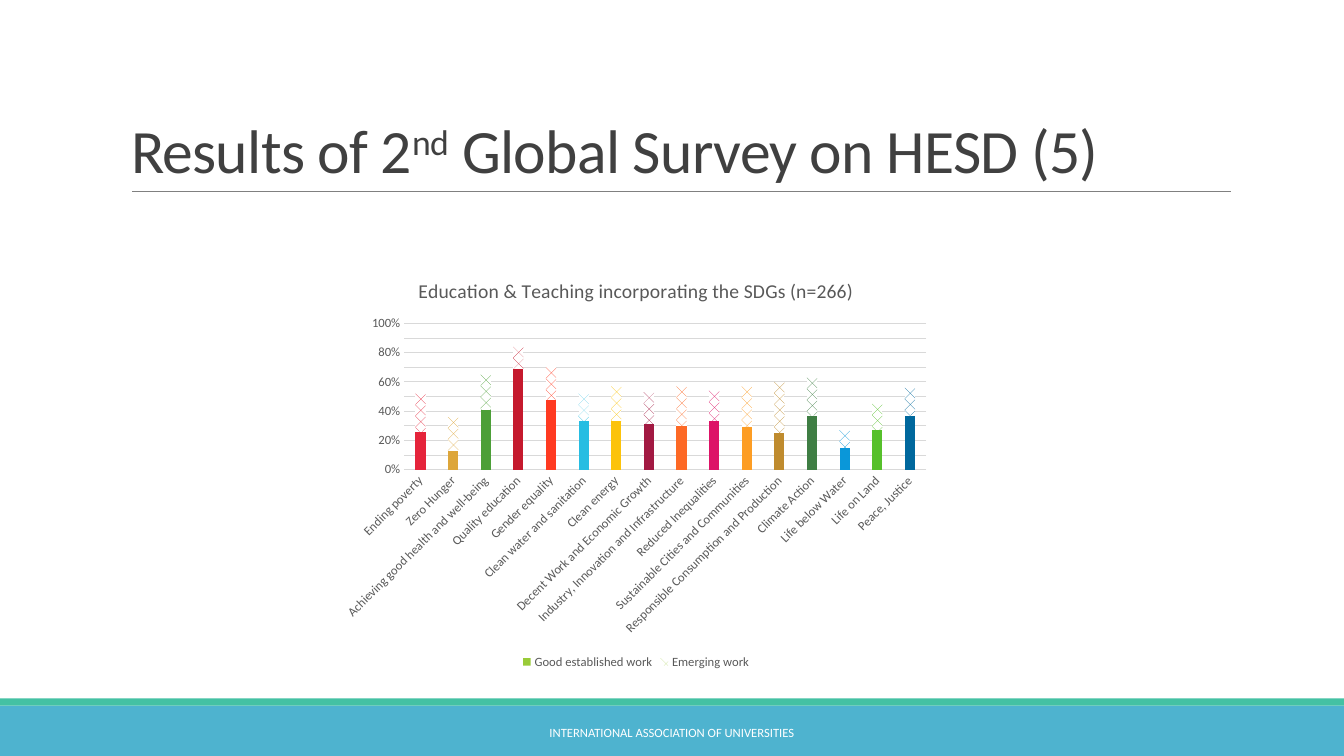
from lxml import etree
from pptx import Presentation
from pptx.chart.data import CategoryChartData
from pptx.dml.color import RGBColor
from pptx.enum import chart as ch, dml, shapes, text
from pptx.oxml import parse_xml
from pptx.oxml.ns import nsdecls, qn
from pptx.util import Inches, Pt

FONT = "Calibri"
WIDTH, HEIGHT = Inches(40) // 3, Inches(7.5)
CHART_W, CHART_H = 6, 4.1
COLORS = {
    "band": "4EB3CF", "strip": "44C1A3", "rule": "808080", "title": "404040",
    "label": "595959", "grid": "D9D9D9", "white": "FFFFFF", "key": "99CB38",
}
# goal, good established work, emerging work, colour
GOALS = [
    ("Ending poverty", 0.26, 0.26, "E5243B"),
    ("Zero Hunger", 0.13, 0.23, "DDA63A"),
    ("Achieving good health and well-being", 0.41, 0.24, "4C9F38"),
    ("Quality education", 0.69, 0.15, "C5192D"),
    ("Gender equality", 0.48, 0.22, "FF3A21"),
    ("Clean water and sanitation", 0.33, 0.19, "26BDE2"),
    ("Clean energy", 0.33, 0.24, "FCC30B"),
    ("Decent Work and Economic Growth", 0.31, 0.22, "A21942"),
    ("Industry, Innovation and Infrastructure", 0.3, 0.27, "FD6925"),
    ("Reduced Inequalities", 0.33, 0.21, "DD1367"),
    ("Sustainable Cities and Communities", 0.29, 0.28, "FD9D24"),
    ("Responsible Consumption and Production", 0.25, 0.35, "BF8B2E"),
    ("Climate Action", 0.37, 0.26, "3F7E44"),
    ("Life below Water", 0.15, 0.12, "0A97D9"),
    ("Life on Land", 0.27, 0.18, "56C02B"),
    ("Peace, Justice", 0.37, 0.19, "00689D"),
]


def rgb(name):
    return RGBColor.from_string(COLORS.get(name, name))


def style(font, size, color):
    font.name = FONT
    font.size = Pt(size)
    font.bold = False
    font.color.rgb = rgb(color)


def add_bar(slide, top, height, color):
    bar = slide.shapes.add_shape(
        shapes.MSO_SHAPE.RECTANGLE, 0, Inches(top), WIDTH, Inches(height))
    bar.shadow.inherit = False
    bar.fill.solid()
    bar.fill.fore_color.rgb = rgb(color)
    bar.line.fill.background()


def add_rule(slide):
    rule = slide.shapes.add_connector(
        shapes.MSO_CONNECTOR.STRAIGHT,
        Inches(1.31), Inches(1.9), Inches(12.21), Inches(1.9))
    rule.line.color.rgb = rgb("rule")
    rule.line.width = Pt(0.5)
    etree.SubElement(rule._element.spPr, qn("a:effectLst"))


def set_title(slide):
    title = slide.shapes.title
    title.left, title.top = Inches(1.2), Inches(0.31)
    title.width, title.height = Inches(11), Inches(1.59)
    frame = title.text_frame
    frame.vertical_anchor = text.MSO_ANCHOR.BOTTOM
    para = frame.paragraphs[0]
    para.alignment = text.PP_ALIGN.LEFT
    para.line_spacing = 0.85
    style(para.font, 44, "title")
    for words, raised in (("Results of 2", 0), ("nd", 30000),
                          (" Global Survey on HESD (5)", 0)):
        run = para.add_run()
        run.text = words
        props = run._r.get_or_add_rPr()
        props.set("spc", "-50")
        if raised:
            props.set("baseline", str(raised))


def add_footer(slide):
    box = slide.shapes.add_textbox(
        Inches(4.03), Inches(7.07), Inches(5.27), Inches(0.4))
    frame = box.text_frame
    frame.word_wrap = True
    frame.vertical_anchor = text.MSO_ANCHOR.MIDDLE
    para = frame.paragraphs[0]
    para.text = "INTERNATIONAL ASSOCIATION OF UNIVERSITIES"
    para.alignment = text.PP_ALIGN.CENTER
    style(para.font, 9, "white")


def paint(fill, color, dotted):
    if dotted:
        fill.patterned()
        fill.pattern = dml.MSO_PATTERN.PERCENT_25
        fill.back_color.rgb = rgb("white")
    else:
        fill.solid()
    fill.fore_color.rgb = rgb(color)


def place_plot(chart, left, top, width, height):
    """Fix the inner plot area, in inches within the chart."""
    area = chart._chartSpace.chart.plotArea
    for old in area.findall(qn("c:layout")):
        area.remove(old)
    parts = {"x": left / CHART_W, "y": top / CHART_H,
             "w": width / CHART_W, "h": height / CHART_H}
    sizes = "".join(f'<c:{key} val="{val}"/>' for key, val in parts.items())
    area.insert(0, parse_xml(
        f'<c:layout {nsdecls("c")}><c:manualLayout><c:layoutTarget val="inner"/>'
        f'<c:xMode val="edge"/><c:yMode val="edge"/>{sizes}'
        '</c:manualLayout></c:layout>'))


def format_axes(chart):
    cat, val = chart.category_axis, chart.value_axis
    for axis in (cat, val):
        axis.major_tick_mark = axis.minor_tick_mark = ch.XL_TICK_MARK.NONE
        style(axis.tick_labels.font, 9, "label")
    cat.format.line.color.rgb = rgb("grid")
    cat.format.line.width = Pt(0.75)
    cat._element.txPr.bodyPr.set("rot", "-2700000")
    val.minimum_scale, val.maximum_scale, val.major_unit = 0, 1, 0.1
    val.tick_labels.number_format = "0%"
    val.tick_labels.number_format_is_linked = False
    val.format.line.fill.background()
    val.major_gridlines.format.line.color.rgb = rgb("grid")
    val.major_gridlines.format.line.width = Pt(0.75)


def add_chart(slide):
    names, good, rising, tints = zip(*GOALS)
    data = CategoryChartData(number_format="0%")
    data.categories = names
    data.add_series("Good established work", good)
    data.add_series("Emerging work", rising)
    chart = slide.shapes.add_chart(
        ch.XL_CHART_TYPE.COLUMN_STACKED, Inches(3.31), Inches(2.58),
        Inches(CHART_W), Inches(CHART_H), data).chart
    style(chart.font, 10, "label")

    chart.has_title = True
    para = chart.chart_title.text_frame.paragraphs[0]
    para.text = "Education & Teaching incorporating the SDGs (n=266)"
    style(para.font, 14, "label")
    chart.chart_title.include_in_layout = False

    chart.has_legend = True
    chart.legend.position = ch.XL_LEGEND_POSITION.BOTTOM
    chart.legend.include_in_layout = False
    style(chart.legend.font, 9, "label")

    format_axes(chart)
    place_plot(chart, 0.7, 0.63, 5.18, 1.45)
    plot = chart.plots[0]
    plot.vary_by_categories = False
    plot.gap_width, plot.overlap = 219, 100
    for series, dotted in zip(plot.series, (False, True)):
        paint(series.format.fill, "key", dotted)
        for i, tint in enumerate(tints):
            paint(series.points[i].format.fill, tint, dotted)


def main():
    deck = Presentation()
    deck.slide_width, deck.slide_height = WIDTH, HEIGHT
    slide = deck.slides.add_slide(deck.slide_layouts[5])
    add_bar(slide, 7, 0.5, "band")
    add_rule(slide)
    add_bar(slide, 6.93, 0.07, "strip")
    set_title(slide)
    add_footer(slide)
    add_chart(slide)
    deck.save("out.pptx")


if __name__ == "__main__":
    main()
